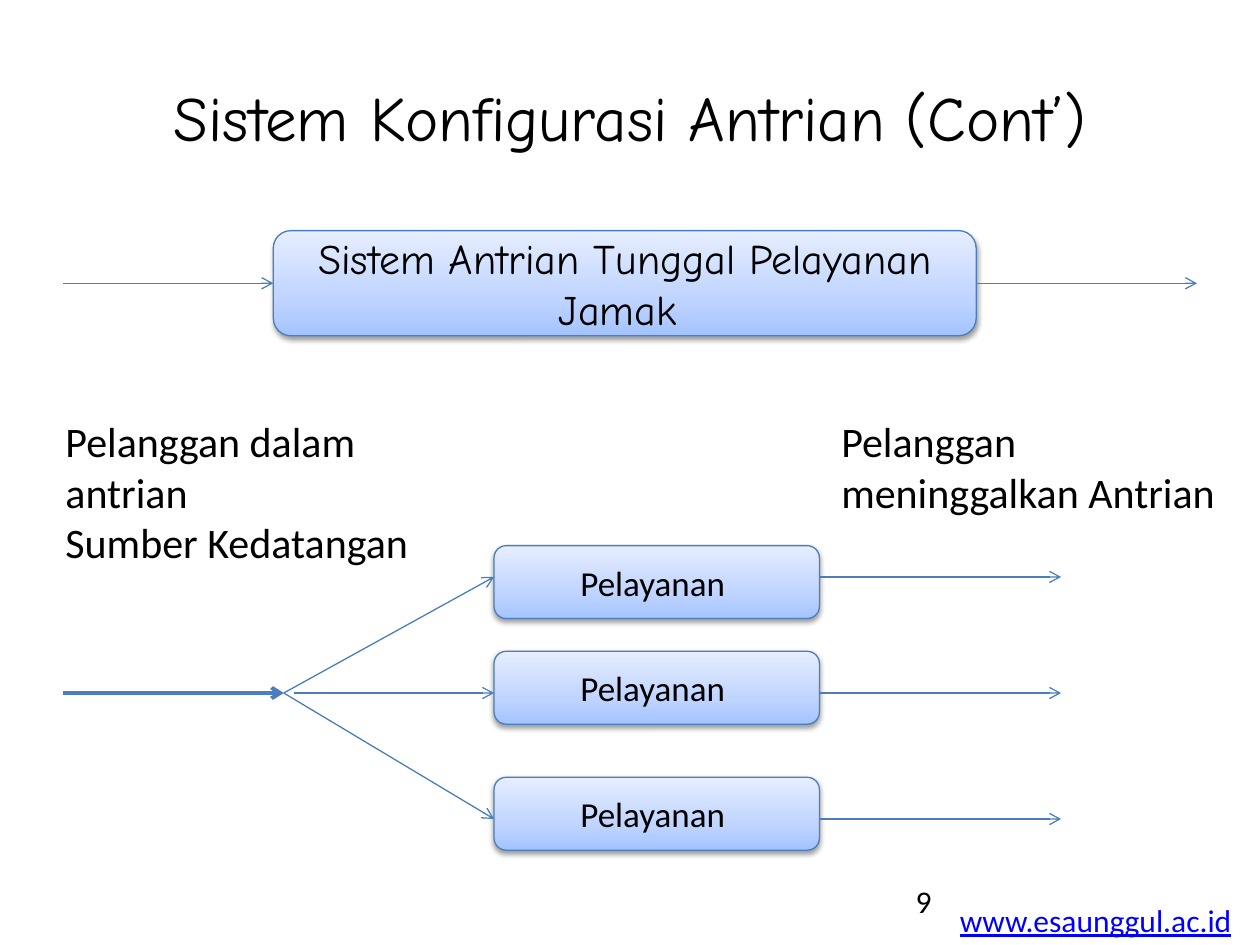
import pptx
import pptx.util
import pptx.dml.color
import pptx.enum.shapes
import pptx.enum.text
import pptx.oxml
import pptx.oxml.ns

Cm = pptx.util.Cm
Pt = pptx.util.Pt
RGB = pptx.dml.color.RGBColor.from_string
ALIGN = pptx.enum.text.PP_ALIGN
ANCHOR = pptx.enum.text.MSO_ANCHOR
SHAPE = pptx.enum.shapes.MSO_SHAPE
STRAIGHT = pptx.enum.shapes.MSO_CONNECTOR.STRAIGHT
NS = pptx.oxml.ns.nsdecls("a")

THEME = {
    "heading": "Comic Neue",
    "body": "Calibri",
    "ink": "000000",
    "link": "0000FF",
    "line": "4B7EBC",
    "gradient": [(0, "A4C4FF"), (35, "BFD4FF"), (100, "E6EEFF")],
    "title": 36,
    "label": 24,
    "server": 20,
    "small": 18,
    "thin": 0.75,
    "thick": 2.25,
}

TITLE = ("Sistem Konfigurasi Antrian (Cont’)", (1.27, 0.76, 22.86, 3.18))
SYSTEM = ("Sistem Antrian Tunggal Pelayanan Jamak ", (5.51, 4.65, 14.17, 2.12))
LABELS = [
    (["Pelanggan dalam antrian", "Sumber Kedatangan"], (1.07, 8.26, 8.97, 2.31)),
    (["Pelanggan meninggalkan Antrian"], (16.71, 8.26, 8.69, 2.31)),
]
PAGE = ("9", (18.21, 17.65, 5.92, 1.02))
WEBSITE = ("www.esaunggul.ac.id", (19.1, 18.03, 6.05, 1.02))

SERVER_TEXT = "Pelayanan "
SERVER_LEFT, SERVER_WIDTH, SERVER_HEIGHT = 9.96, 6.56, 1.47
SERVERS = [
    {"top": 11.0, "flow": 11.63, "start": 5.72},
    {"top": 13.13, "flow": 13.97, "start": 5.92},
    {"top": 15.67, "flow": 16.51, "start": 5.72},
]
QUEUE_START, FORK, EXIT_END = 1.27, (5.72, 13.97), 21.39
SYSTEM_END = 24.13


def write(frame, lines, size, font="body", color="ink", align=ALIGN.LEFT,
          anchor=ANCHOR.TOP, underline=None):
    frame.word_wrap = True
    frame.vertical_anchor = anchor
    for index, line in enumerate(lines):
        paragraph = frame.paragraphs[0] if index == 0 else frame.add_paragraph()
        paragraph.alignment = align
        run = paragraph.add_run()
        run.text = line
        run.font.name = THEME[font]
        run.font.size = Pt(THEME[size])
        run.font.color.rgb = RGB(THEME[color])
        run.font.underline = underline


def add_text(slide, lines, place, size, **style):
    box = slide.shapes.add_textbox(*map(Cm, place))
    write(box.text_frame, lines, size, **style)
    return box


def add_station(slide, text, place, size, font="body"):
    station = slide.shapes.add_shape(SHAPE.ROUNDED_RECTANGLE, *map(Cm, place))
    station.line.color.rgb = RGB(THEME["line"])
    station.line.width = Pt(THEME["thin"])
    station.shadow.inherit = False
    properties = station.element.spPr
    stops = "".join(
        f'<a:gs pos="{position * 1000}"><a:srgbClr val="{color}"/></a:gs>'
        for position, color in THEME["gradient"]
    )
    properties.find(pptx.oxml.ns.qn("a:prstGeom")).addnext(pptx.oxml.parse_xml(
        f'<a:gradFill {NS} rotWithShape="1"><a:gsLst>{stops}</a:gsLst>'
        '<a:lin ang="16200000" scaled="0"/></a:gradFill>'
    ))
    properties.find(pptx.oxml.ns.qn("a:effectLst")).append(pptx.oxml.parse_xml(
        f'<a:outerShdw {NS} blurRad="40000" dist="20000" dir="5400000" rotWithShape="0">'
        '<a:srgbClr val="000000"><a:alpha val="38000"/></a:srgbClr></a:outerShdw>'
    ))
    write(station.text_frame, [text], size, font, align=ALIGN.CENTER, anchor=ANCHOR.MIDDLE)
    return station


def add_arrow(slide, start, end, width="thin"):
    arrow = slide.shapes.add_connector(STRAIGHT, *map(Cm, start + end))
    arrow.line.color.rgb = RGB(THEME["line"])
    arrow.line.width = Pt(THEME[width])
    arrow.line._get_or_add_ln().append(pptx.oxml.parse_xml(f'<a:tailEnd {NS} type="arrow"/>'))
    arrow.element.spPr.append(pptx.oxml.parse_xml(f"<a:effectLst {NS}/>"))
    return arrow


def main():
    deck = pptx.Presentation()
    deck.slide_width, deck.slide_height = Cm(25.4), Cm(19.05)
    slide = deck.slides.add_slide(deck.slide_layouts[6])

    website, website_place = WEBSITE
    add_text(slide, [website], website_place, "small", color="link", underline=True)
    title, title_place = TITLE
    add_text(slide, [title], title_place, "title", font="heading",
             align=ALIGN.CENTER, anchor=ANCHOR.MIDDLE)

    system_text, system_place = SYSTEM
    system = add_station(slide, system_text, system_place, "label", "heading")
    left, top, width, height = system_place
    middle = top + height / 2
    add_arrow(slide, (QUEUE_START, middle), (left, middle)).end_connect(system, 1)
    add_arrow(slide, (left + width, middle), (SYSTEM_END, middle)).begin_connect(system, 3)

    for lines, place in LABELS:
        add_text(slide, lines, place, "label")

    add_arrow(slide, (QUEUE_START, FORK[1]), FORK, "thick")
    for server in SERVERS:
        place = (SERVER_LEFT, server["top"], SERVER_WIDTH, SERVER_HEIGHT)
        add_station(slide, SERVER_TEXT, place, "server")
        flow = server["flow"]
        add_arrow(slide, (server["start"], FORK[1]), (SERVER_LEFT, flow))
        add_arrow(slide, (SERVER_LEFT + SERVER_WIDTH, flow), (EXIT_END, flow))

    page, page_place = PAGE
    add_text(slide, [page], page_place, "small")
    deck.save("out.pptx")


if __name__ == "__main__":
    main()
